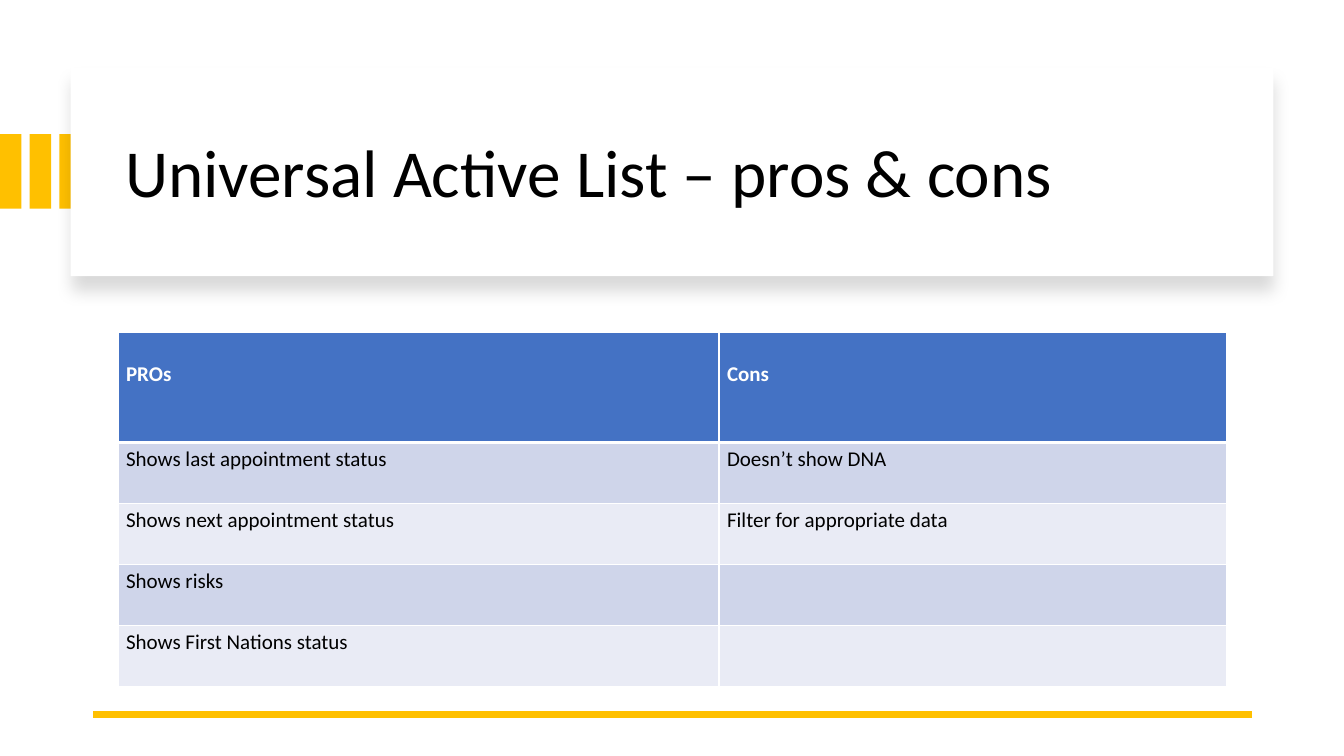
"""Build a slide that sets out the pros and cons of the Universal Active List."""
from lxml import etree
from pptx import Presentation, util as u
from pptx.dml.color import RGBColor
from pptx.enum import shapes, text
from pptx.oxml.ns import qn

TITLE = "Universal Active List – pros & cons"
ROWS = [
    ("PROs", "Cons"),
    ("Shows last appointment status", "Doesn’t show DNA"),
    ("Shows next appointment status", "Filter for appropriate data"),
    ("Shows risks", ""),
    ("Shows First Nations status", ""),
]
COLORS = {"gold": "FFC000", "white": "FFFFFF", "black": "000000",
          "header": "4472C4", "odd": "CFD5EA", "even": "E9EBF5"}

WIDTH, HEIGHT = u.Inches(13.33), u.Inches(7.5)
BOXES = {
    "card": (5.25, 8.93, 89.5, 27.6),
    "title": (8.55, 11.87, 83.5, 22.67),
    "table": (8.78, 44, 82.5, 46.8),
    "stripe": (0, 17.73, 1.6, 9.87),
}
STRIPES, STRIPE_PITCH = 3, 2.21
RULE = (93.17, 6.9, 94.53)
COLUMN_SHARES = (54.2, 45.8)
HEADER_SHARE = 31.05

TITLE_FONT = {"name": "Calibri", "size": u.Pt(48), "bold": False}
HEADER_FONT = {"name": "Calibri", "size": u.Pt(15), "bold": True}
BODY_FONT = {**HEADER_FONT, "bold": False}
TITLE_FRAME = {"word_wrap": True, "auto_size": text.MSO_AUTO_SIZE.NONE,
               "vertical_anchor": text.MSO_ANCHOR.MIDDLE}
CELL_MARGINS = {"margin_left": u.Inches(0.08), "margin_right": u.Inches(0.08),
                "margin_top": u.Inches(0.04), "margin_bottom": u.Inches(0.04)}
HEADER_MARGINS = {**CELL_MARGINS, "margin_top": u.Inches(0.29)}


def across(share):
    return round(WIDTH * share / 100)


def down(share):
    return round(HEIGHT * share / 100)


def place(name):
    left, top, width, height = BOXES[name]
    return across(left), down(top), across(width), down(height)


def color(name):
    return RGBColor.from_string(COLORS[name])


def apply(target, values):
    for name, value in values.items():
        setattr(target, name, value)


def write(paragraph, words, font, color_name):
    run = paragraph.add_run()
    run.text = words
    apply(run.font, font)
    run.font.color.rgb = color(color_name)


def add_box(slide, box, color_name):
    shape = slide.shapes.add_shape(shapes.MSO_SHAPE.RECTANGLE, *box)
    shape.shadow.inherit = False
    shape.fill.solid()
    shape.fill.fore_color.rgb = color(color_name)
    shape.line.fill.background()
    return shape


def add_color(parent, name):
    return etree.SubElement(parent, qn("a:srgbClr"), val=COLORS[name])


def add_shadow(shape):
    effects = shape.element.spPr.find(qn("a:effectLst"))
    shadow = etree.SubElement(effects, qn("a:outerShdw"), blurRad=str(u.Pt(11)),
                              dist=str(u.Pt(10)), dir="5400000", rotWithShape="0")
    etree.SubElement(add_color(shadow, "black"), qn("a:alpha"), val="15000")


def add_borders(cell, widths):
    properties = cell._tc.get_or_add_tcPr()
    for index, (side, points) in enumerate(widths.items()):
        line = etree.Element(qn(f"a:ln{side}"), w=str(u.Pt(points)))
        add_color(etree.SubElement(line, qn("a:solidFill")), "white")
        properties.insert(index, line)


def add_stripes(slide):
    left, top, width, height = place("stripe")
    for index in range(STRIPES):
        add_box(slide, (left + index * across(STRIPE_PITCH), top, width, height), "gold")


def add_title(slide):
    title = slide.shapes.title
    title.left, title.top, title.width, title.height = place("title")
    apply(title.text_frame, TITLE_FRAME)
    paragraph = title.text_frame.paragraphs[0]
    apply(paragraph, {"alignment": text.PP_ALIGN.LEFT, "line_spacing": 0.9})
    write(paragraph, TITLE, TITLE_FONT, "black")
    title.element.getparent().append(title.element)


def add_rule(slide):
    start, end, level = RULE
    rule = slide.shapes.add_connector(shapes.MSO_CONNECTOR.STRAIGHT, across(start),
                                      down(level), across(end), down(level))
    rule.line.color.rgb = color("gold")
    rule.line.width = u.Pt(4.5)
    etree.SubElement(rule.element.spPr, qn("a:effectLst"))


def add_comparison(slide):
    left, top, width, height = place("table")
    table = slide.shapes.add_table(len(ROWS), len(COLUMN_SHARES),
                                   left, top, width, height).table
    for column, share in zip(table.columns, COLUMN_SHARES):
        column.width = round(width * share / 100)
    header_height = round(height * HEADER_SHARE / 100)
    body_height = (height - header_height) // (len(ROWS) - 1)
    for index, words in enumerate(ROWS):
        header = index == 0
        table.rows[index].height = header_height if header else body_height
        fill = "header" if header else ("odd" if index % 2 else "even")
        borders = {"L": 1, "R": 1, "T": 3 if index == 1 else 1, "B": 3 if header else 1}
        for cell, entry in zip(table.rows[index].cells, words):
            apply(cell, HEADER_MARGINS if header else CELL_MARGINS)
            cell.fill.solid()
            cell.fill.fore_color.rgb = color(fill)
            add_borders(cell, borders)
            if entry:
                write(cell.text_frame.paragraphs[0], entry,
                      HEADER_FONT if header else BODY_FONT,
                      "white" if header else "black")


def main():
    presentation = Presentation()
    presentation.slide_width, presentation.slide_height = WIDTH, HEIGHT
    slide = presentation.slides.add_slide(presentation.slide_layouts[5])
    slide.background.fill.solid()
    slide.background.fill.fore_color.rgb = color("white")
    add_stripes(slide)
    add_shadow(add_box(slide, place("card"), "white"))
    add_title(slide)
    add_rule(slide)
    add_comparison(slide)
    presentation.save("out.pptx")


if __name__ == "__main__":
    main()
